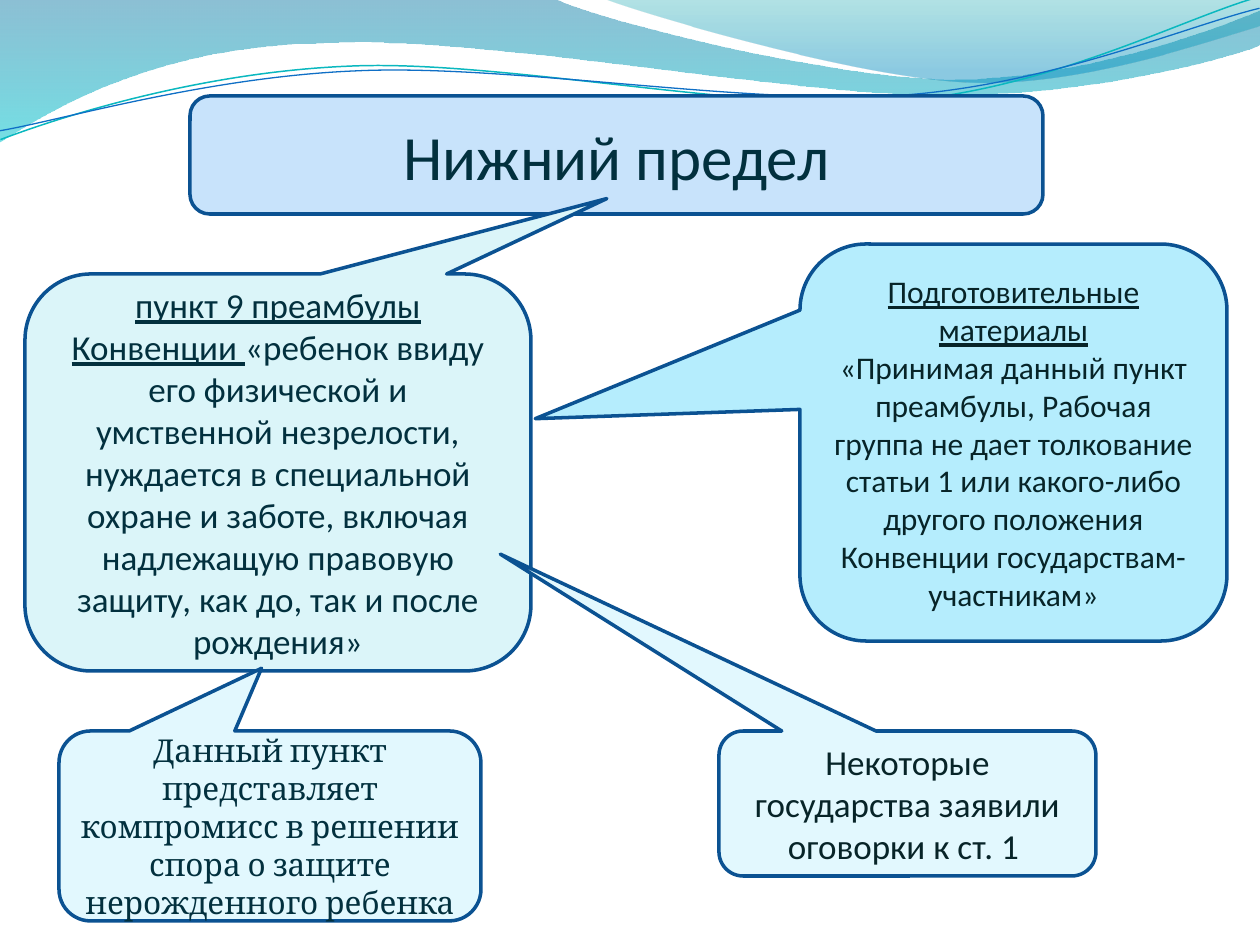
"""Build the slide on the lower limit: wave header, title box and four callouts."""
from lxml import etree
from pptx import Presentation
from pptx.dml.color import RGBColor
from pptx.enum.shapes import MSO_SHAPE
from pptx.enum.text import MSO_ANCHOR, PP_ALIGN
from pptx.oxml.ns import qn
from pptx.util import Pt

PX = 914400 / 126
RECT = MSO_SHAPE.ROUNDED_RECTANGLE
CALLOUT = MSO_SHAPE.ROUNDED_RECTANGULAR_CALLOUT
CENTER, MIDDLE = PP_ALIGN.CENTER, MSO_ANCHOR.MIDDLE


def rgb(value):
    return RGBColor.from_string(value)


def wave(shapes, start, segments, close):
    pts = [pt for seg in segments for pt in zip(seg[::2], seg[1::2])]
    fb = shapes.build_freeform(*start, scale=PX)
    fb.add_line_segments(pts, close=close)
    sp = fb.convert_to_shape()
    sp.shadow.inherit = False
    lines = iter(sp._element.xpath(".//a:path/a:lnTo"))
    for seg in segments:
        group = [next(lines) for _ in seg[::2]]
        if len(group) == 3:
            curve = etree.Element(qn("a:cubicBezTo"))
            group[0].addprevious(curve)
            for line in group:
                curve.append(line[0])
                line.getparent().remove(line)
    return sp


prs = Presentation()
prs.slide_width, prs.slide_height = round(1260 * PX), round(945 * PX)
s = prs.slides.add_slide(prs.slide_layouts[6])

bands = [
    ((0, 0), [(555, -1), (600, 21, 837, 79, 955, 79), (1075, 79, 1207, 33, 1260, 11), (1261, 45),
              (1239, 55, 1096, 96, 940, 95), (784, 95, 481, 35, 324, 43), (163, 45, 58, 105, -1, 142)],
     [(0, "0074A1", 45), (1, "00C6CF", 55)]),
    ((604, -1), [(641, 14, 859, 78, 969, 82), (1079, 87, 1211, 40, 1260, 26), (1260, 0)],
     [(0, "00A1A9", 30), (0.8, "008BBF", 45)]),
]
for start, segments, stops in bands:
    sp = wave(s.shapes, start, segments, True)
    sp.line.fill.background()
    sp.fill.gradient()
    sp.fill.gradient_angle = 270
    for stop, (pos, color, _) in zip(sp.fill.gradient_stops, stops):
        stop.position, stop.color.rgb = pos, rgb(color)
    for clr, (_, _, alpha) in zip(sp._element.xpath(".//a:gs/a:srgbClr"), stops):
        etree.SubElement(clr, qn("a:alpha")).set("val", str(alpha * 1000))

curves = [
    ((-2, 110), [(59, 90, 200, 52, 350, 53), (499, 53, 745, 118, 896, 114),
                 (1049, 109, 1184, 45, 1260, 27)], "0AB8BF", 0.85),
    ((-2, 101), [(57, 94, 207, 57, 357, 58), (509, 58, 750, 112, 902, 108),
                 (1052, 104, 1189, 52, 1262, 38)], "0F6FC6", 0.75),
]
for start, segments, color, width in curves:
    sp = wave(s.shapes, start, segments, False)
    sp.rotation = 357.3
    sp.fill.background()
    sp.line.color.rgb, sp.line.width = rgb(color), Pt(width)

boxes = [
    (RECT, (190, 96, 853, 118), [], "C8E3FB", ("Calibri", 36, "02303E"),
     [[("Нижний предел", False)]]),
    (CALLOUT, (25, 274, 506, 397), [0.65, -0.69], "DBF5F9", ("Calibri", 20, "02303E"),
     [[("пункт 9 преамбулы Конвенции ", True),
       ("«ребенок ввиду его физической и умственной незрелости, нуждается в специальной охране "
        "и заботе, включая надлежащую правовую защиту, как до, так и после рождения»", False)]]),
    (CALLOUT, (59, 731, 422, 190), [-0.02, -0.83], "E2F8FE", ("Cambria", 18, "02303E"),
     [[("Данный пункт представляет компромисс в решении спора о защите нерожденного ребенка", False)]]),
    (CALLOUT, (800, 244, 427, 397), [-1.12, -0.06], "B5EDFD", ("Calibri", 18, "072428"),
     [[("Подготовительные материалы", True)],
      [("«Принимая данный пункт преамбулы, Рабочая группа не дает толкование статьи 1 или "
        "какого-либо другого положения Конвенции государствам-участникам»", False)]]),
    (CALLOUT, (719, 731, 377, 145), [-1.08, -1.72], "E2F8FE", ("Calibri", 20, "072428"),
     [[("Некоторые государства заявили оговорки к ст. 1 ", False)]]),
]
for kind, box, tip, fill, (font, size, color), paragraphs in boxes:
    sp = s.shapes.add_shape(kind, *(round(v * PX) for v in box))
    sp.shadow.inherit = False
    for i, value in enumerate(tip):
        sp.adjustments[i] = value
    sp.fill.solid()
    sp.fill.fore_color.rgb = rgb(fill)
    sp.line.color.rgb, sp.line.width = rgb("0B5292"), Pt(2)
    tf = sp.text_frame
    tf.word_wrap, tf.vertical_anchor = True, MIDDLE
    for i, runs in enumerate(paragraphs):
        p = tf.add_paragraph() if i else tf.paragraphs[0]
        p.alignment = CENTER
        for text, underline in runs:
            r = p.add_run()
            r.text = text
            r.font.color.rgb = rgb(color)
            for name, value in {"name": font, "size": Pt(size), "underline": underline}.items():
                setattr(r.font, name, value)

prs.save("out.pptx")
